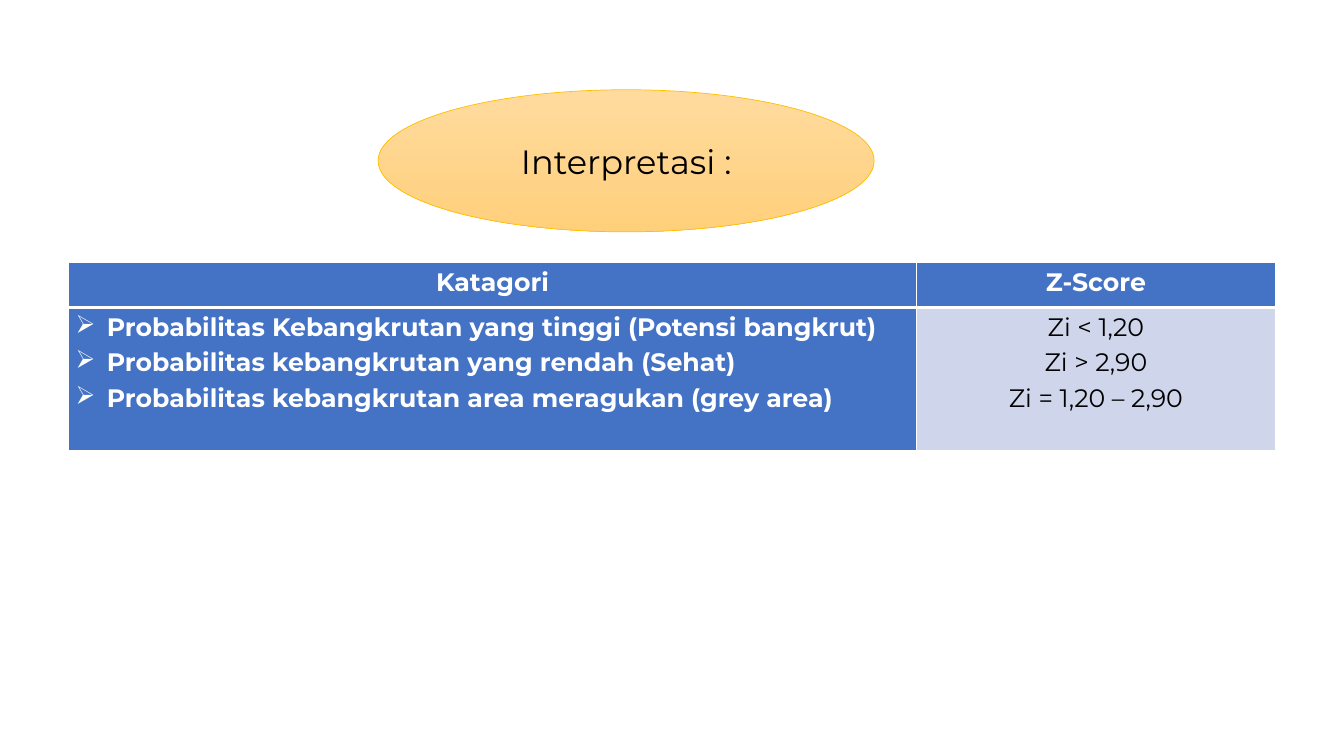
from lxml.etree import SubElement
from pptx import Presentation
from pptx.dml.color import RGBColor
from pptx.enum.shapes import MSO_SHAPE as Shape
from pptx.enum.text import MSO_ANCHOR as Anchor, PP_ALIGN as Align
from pptx.oxml import parse_xml
from pptx.oxml.ns import nsdecls, qn
from pptx.util import Pt

PX = 9144  # EMU per px, at 100 px to the inch
FONT = "Montserrat"
WHITE = RGBColor(0xFF, 0xFF, 0xFF)
BLACK = RGBColor(0x00, 0x00, 0x00)
BLUE = RGBColor(0x44, 0x72, 0xC4)
PALE_BLUE = RGBColor(0xCF, 0xD5, 0xEA)
GOLD = RGBColor(0xFF, 0xC0, 0x00)
LIGHT_ORANGE = RGBColor(0xFF, 0xDB, 0x9E)
ORANGE = RGBColor(0xFF, 0xD0, 0x7C)

COLUMN_WIDTHS = (841, 356)
ROW_HEIGHTS = (45, 142)
CATEGORIES = (
    "Probabilitas Kebangkrutan yang tinggi (Potensi bangkrut)",
    "Probabilitas kebangkrutan yang rendah (Sehat)",
    "Probabilitas kebangkrutan area meragukan (grey area)",
)
SCORES = ("Zi < 1,20", "Zi > 2,90", "Zi = 1,20 – 2,90")


def px(*lengths):
    return [length * PX for length in lengths]


def add_bullet(para, mark="➢", indent=31):
    properties = para._p.get_or_add_pPr()
    properties.set("marL", str(indent * PX))
    properties.set("indent", str(-indent * PX))
    SubElement(properties, qn("a:buChar")).set("char", mark)


def write_text(frame, lines, size=18, color=BLACK, bold=False,
               align=Align.CENTER, spacing=None, bullet=False):
    for index, line in enumerate(lines):
        para = frame.add_paragraph() if index else frame.paragraphs[0]
        para.alignment = align
        if spacing:
            para.line_spacing = spacing
        if bullet:
            add_bullet(para)
        span = para.add_run()
        span.text = line
        span.font.name = FONT
        span.font.size = Pt(size)
        span.font.bold = bold
        span.font.color.rgb = color


def set_borders(cell, **widths):
    """Give the cell white borders; widths are points by side: L, R, T, B."""
    properties = cell._tc.get_or_add_tcPr()
    for index, side in enumerate("LRTB"):
        width = Pt(widths.get(side, 1))
        properties.insert(index, parse_xml(
            f'<a:ln{side} {nsdecls("a")} w="{width}"><a:solidFill>'
            f'<a:srgbClr val="{WHITE}"/></a:solidFill></a:ln{side}>'))


def fill_cell(cell, lines, fill, borders, **text_format):
    cell.margin_left, cell.margin_right = px(7, 7)
    cell.margin_top = cell.margin_bottom = 0
    cell.fill.solid()
    cell.fill.fore_color.rgb = fill
    set_borders(cell, **borders)
    write_text(cell.text_frame, lines, spacing=1.15, **text_format)


def add_score_table(page):
    table = page.shapes.add_table(
        2, 2, *px(68, 260, sum(COLUMN_WIDTHS), sum(ROW_HEIGHTS))).table
    for column, width in zip(table.columns, COLUMN_WIDTHS):
        column.width = width * PX
    for row, height in zip(table.rows, ROW_HEIGHTS):
        row.height = height * PX

    # Header row
    for index, heading in enumerate(("Katagori", "Z-Score")):
        fill_cell(table.cell(0, index), [heading], BLUE, {"B": 3},
                  color=WHITE, bold=True)

    # Categories and their scores
    fill_cell(table.cell(1, 0), CATEGORIES, BLUE, {"T": 3},
              color=WHITE, bold=True, align=Align.LEFT, bullet=True)
    fill_cell(table.cell(1, 1), SCORES, PALE_BLUE, {"T": 3})


def add_title_ellipse(page, title):
    box = page.shapes.add_shape(Shape.OVAL, *px(375, 89, 492, 141))
    box.shadow.inherit = False
    box.fill.gradient()
    box.fill.gradient_angle = 270
    for stop, color in zip(box.fill.gradient_stops, (LIGHT_ORANGE, ORANGE)):
        stop.color.rgb = color
    box.line.color.rgb = GOLD
    box.line.width = Pt(0.5)
    box.text_frame.word_wrap = True
    box.text_frame.vertical_anchor = Anchor.MIDDLE
    write_text(box.text_frame, [title], size=24)


def main():
    deck = Presentation()
    deck.slide_width, deck.slide_height = px(1333, 750)
    page = deck.slides.add_slide(deck.slide_layouts[6])
    add_score_table(page)
    add_title_ellipse(page, "Interpretasi :")
    deck.save("out.pptx")


if __name__ == "__main__":
    main()
